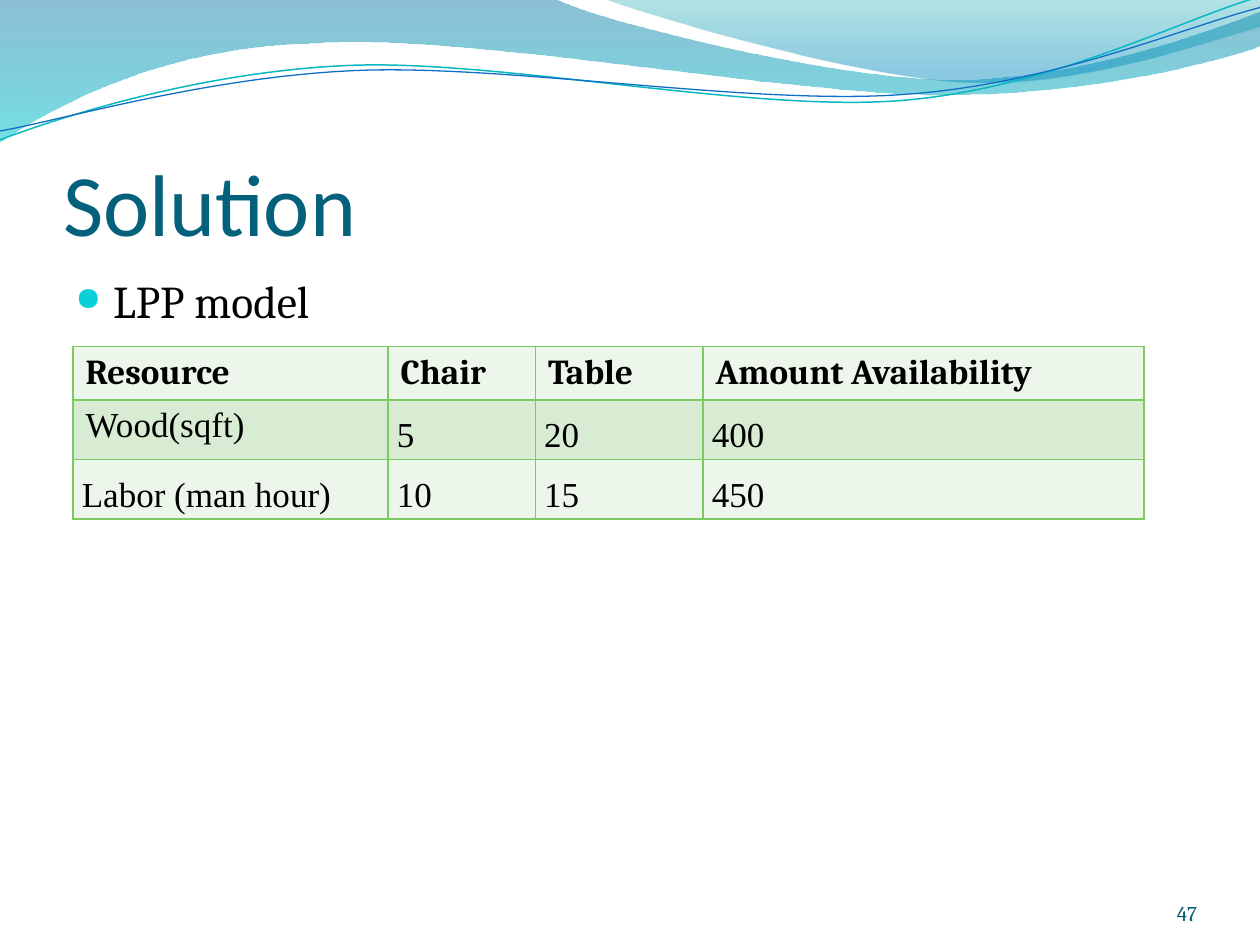
from lxml import etree
from pptx import Presentation
from pptx import util as u
from pptx.dml.color import RGBColor
from pptx.enum import text
from pptx.oxml.ns import qn

GREEN, PALE, LIGHT = "7CCA62", "ECF6EA", "D7ECD3"
HEADING = "04617B"


def colour(value):
    return RGBColor.from_string(value)


def child(parent, tag, **attributes):
    return etree.SubElement(parent, qn(tag), attributes)


def write(frame, words, size=20, font="Cambria", hue="000000", bold=False,
          align=text.PP_ALIGN.LEFT, anchor=None, insets=None, spacing=None):
    """Put one formatted paragraph into a text frame and return it."""
    frame.word_wrap = True
    if anchor is not None:
        frame.vertical_anchor = anchor
    if insets:
        (frame.margin_left, frame.margin_top,
         frame.margin_right, frame.margin_bottom) = map(u.Inches, insets)
    paragraph = frame.paragraphs[0]
    paragraph.alignment = align
    paragraph.line_spacing = spacing
    run = paragraph.add_run()
    run.text = words
    run.font.size, run.font.name, run.font.bold = u.Pt(size), font, bold
    run.font.color.rgb = colour(hue)
    return paragraph


def add_text_box(slide, box, words, **style):
    shape = slide.shapes.add_textbox(*map(u.Inches, box))
    return write(shape.text_frame, words, **style)


def add_curve(slide, segments, closed):
    """Freeform from points (2 numbers) and cubic curves (6 numbers)."""
    points = [(u.Inches(x), u.Inches(y)) for segment in segments
              for x, y in zip(segment[::2], segment[1::2])]
    builder = slide.shapes.build_freeform(*points[0])
    builder.add_line_segments(points[1:], close=closed)
    shape = builder.convert_to_shape()
    shape.shadow.inherit = False
    # Join each three control points into one cubic curve
    lines = iter(list(shape._element.iter(qn("a:lnTo"))))
    for segment in segments[1:]:
        line = next(lines)
        if len(segment) == 6:
            line.tag = qn("a:cubicBezTo")
            for other in (next(lines), next(lines)):
                line.append(other[0])
                other.getparent().remove(other)
    return shape


def add_wave(slide, segments, stops):
    """Closed wave with a transparent gradient running downwards."""
    shape = add_curve(slide, segments, True)
    shape.line.fill.background()
    shape.fill.gradient()
    shape.fill.gradient_angle = 270
    for stop, (position, hue, _) in zip(shape.fill.gradient_stops, stops):
        stop.position, stop.color.rgb = position, colour(hue)
    gradient = shape._element.spPr.find(qn("a:gradFill"))
    for node, (_, _, opacity) in zip(gradient.iter(qn("a:srgbClr")), stops):
        child(node, "a:alpha", val=str(opacity * 1000))


def add_wave_line(slide, segments, hue, width):
    shape = add_curve(slide, segments, False)
    shape.fill.background()
    shape.line.color.rgb, shape.line.width = colour(hue), u.Pt(width)


def add_header_waves(slide):
    add_wave(slide, [
        (0, 0), (4.4, -0.01), (4.76, 0.17, 6.64, 0.63, 7.58, 0.63),
        (8.53, 0.63, 9.58, 0.26, 10, 0.09), (10.01, 0.36),
        (9.83, 0.44, 8.7, 0.76, 7.46, 0.75),
        (6.22, 0.75, 3.82, 0.28, 2.57, 0.34),
        (1.29, 0.36, 0.46, 0.83, -0.01, 1.13),
    ], [(0, "0074A1", 45), (1, "00C6CF", 55)])
    add_wave(slide, [
        (4.79, -0.01), (5.09, 0.11, 6.82, 0.62, 7.69, 0.65),
        (8.56, 0.69, 9.61, 0.32, 10, 0.21), (10, 0),
    ], [(0, "00A1A9", 30), (0.8, "008BBF", 45)])
    add_wave_line(slide, [
        (0, 1.11), (0.48, 0.93, 1.58, 0.57, 2.77, 0.52),
        (3.95, 0.47, 5.93, 0.89, 7.13, 0.8),
        (8.33, 0.71, 9.38, 0.15, 9.98, -0.02),
    ], "0AB8BF", 0.85)
    add_wave_line(slide, [
        (0, 1.04), (0.47, 0.96, 1.64, 0.61, 2.83, 0.56),
        (4.03, 0.51, 5.97, 0.84, 7.17, 0.75),
        (8.36, 0.67, 9.41, 0.21, 10, 0.06),
    ], "0F6FC6", 0.75)


def place_title(slide, box, words):
    title = slide.shapes.title
    title.left, title.top, title.width, title.height = map(u.Inches, box)
    write(title.text_frame, words, size=50, font="Calibri", hue=HEADING,
          anchor=text.MSO_ANCHOR.BOTTOM, insets=(0, 0.05, 0, 0))
    title.text_frame.auto_size = text.MSO_AUTO_SIZE.NONE


def add_bullet(slide, box, words):
    paragraph = add_text_box(slide, box, words, size=26)
    paragraph.space_before = u.Pt(2)
    properties = paragraph._p.get_or_add_pPr()
    indent = u.Inches(0.3)
    properties.set("marL", str(indent))
    properties.set("indent", str(-indent))
    child(child(properties, "a:buClr"), "a:srgbClr", val="0BD0D9")
    child(properties, "a:buSzPct", val="72000")
    child(properties, "a:buChar", char="●")


def add_borders(cell, hue, width):
    properties = cell._tc.get_or_add_tcPr()
    for index, side in enumerate(("a:lnL", "a:lnR", "a:lnT", "a:lnB")):
        line = etree.Element(qn(side), w=str(u.Pt(width)))
        child(child(line, "a:solidFill"), "a:srgbClr", val=hue)
        properties.insert(index, line)


def add_resource_table(slide, box, rows, widths, height):
    table = slide.shapes.add_table(
        len(rows), len(widths), *map(u.Inches, box)).table
    for column, width in zip(table.columns, widths):
        column.width = u.Inches(width)
    for r, values in enumerate(rows):
        table.rows[r].height = u.Inches(height)
        for c, value in enumerate(values):
            cell = table.cell(r, c)
            cell.fill.solid()
            cell.fill.fore_color.rgb = colour(LIGHT if r % 2 else PALE)
            add_borders(cell, GREEN, 1)
            style = {"bold": True} if r == 0 else {"font": "Times New Roman"}
            cell.margin_bottom = u.Inches(0.04)
            # Body cells are tight and widely spaced, except the first label
            if r > 0 and (r, c) != (1, 0):
                style["spacing"] = 1.42
                cell.margin_left = cell.margin_right = u.Inches(0.07)
                cell.margin_top = cell.margin_bottom = 0
            write(cell.text_frame, value, **style)


def main():
    presentation = Presentation()
    presentation.slide_width = u.Inches(10)
    presentation.slide_height = u.Inches(7.5)
    slide = presentation.slides.add_slide(presentation.slide_layouts[5])

    add_header_waves(slide)
    place_title(slide, (0.5, 0.77, 9, 1.25), "Solution")
    add_bullet(slide, (0.5, 2.12, 9, 4.8), "LPP model")
    # Slide number
    add_text_box(slide, (8.67, 6.95, 0.83, 0.4), "47", size=12, hue="045D75",
                 align=text.PP_ALIGN.RIGHT, anchor=text.MSO_ANCHOR.BOTTOM,
                 insets=(0, 0, 0, 0))
    add_resource_table(slide, (0.58, 2.75, 8.5, 1.23), [
        ("Resource", "Chair", "Table", "Amount Availability"),
        ("Wood(sqft)", "5", "20", "400"),
        ("Labor (man hour)", "10", "15", "450"),
    ], widths=(2.5, 1.17, 1.33, 3.5), height=0.41)
    presentation.save("out.pptx")


if __name__ == "__main__":
    main()
